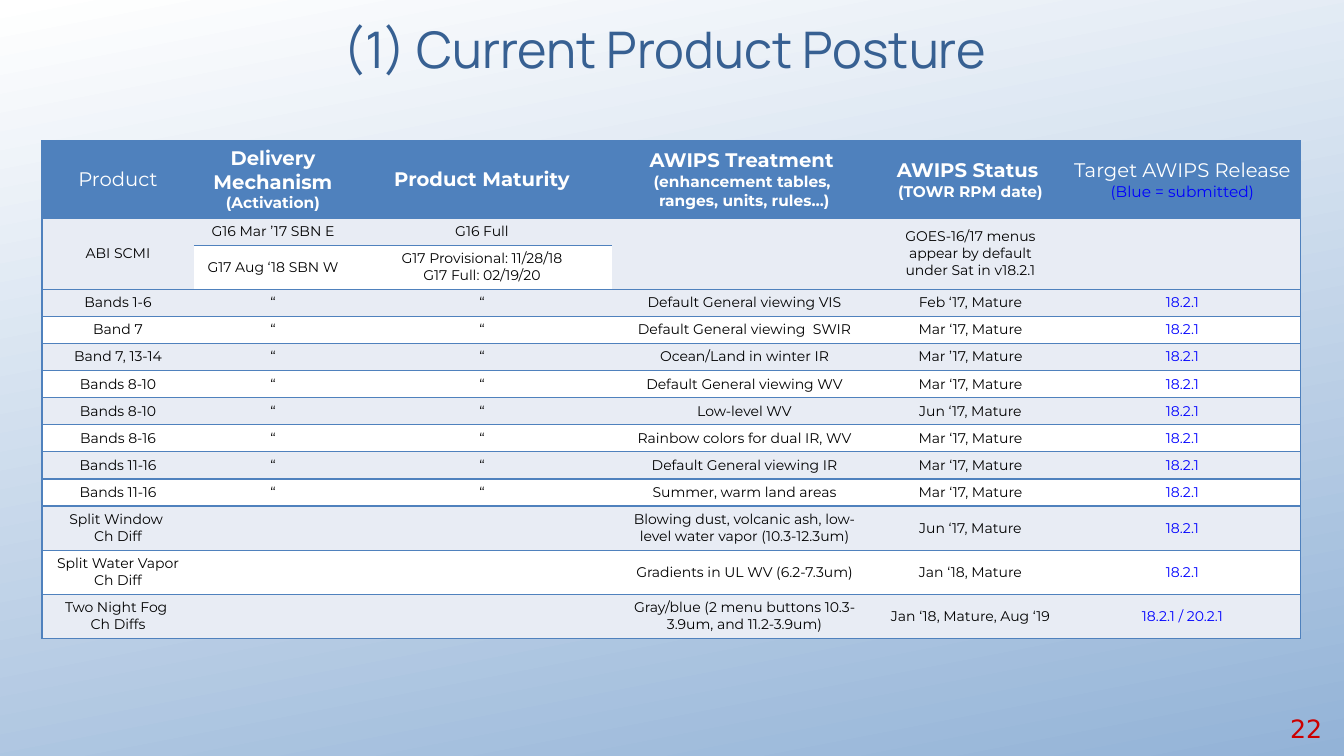
from lxml import etree
from pptx import Presentation
from pptx.dml.color import RGBColor
from pptx.enum.text import MSO_ANCHOR, PP_ALIGN
from pptx.oxml.ns import qn
from pptx.util import Emu, Pt

MIDDLE = MSO_ANCHOR.MIDDLE
CENTER, RIGHT = PP_ALIGN.CENTER, PP_ALIGN.RIGHT

PX = 9071  # EMU per px, 100.8 px to the inch
BLUE, PALE, WHITE, BLACK = "4F81BD", "E8ECF4", "FFFFFF", "000000"
SUBMITTED = "0000FF"
PLAIN_TABLE_STYLE = "{2D5ABB26-0587-4C30-8999-92F81FD0307C}"

COLUMN_WIDTHS = [152, 158, 260, 265, 187, 237]
ROW_HEIGHTS = [77, 27, 44] + [27] * 8 + [44] * 3
MERGED_COLUMNS = (0, 3, 4, 5)
RELEASE_COLUMN = 5

HEADER = [
    "Product",
    "Delivery Mechanism\n(Activation)",
    "Product Maturity",
    "AWIPS Treatment \v(enhancement tables, \vranges, units, rules…)",
    "AWIPS Status \n(TOWR RPM date)",
    "Target AWIPS Release\n(Blue = submitted)",
]
LIGHT_HEADINGS = ("Product", HEADER[RELEASE_COLUMN])
SCMI_ROWS = [
    ["ABI SCMI", "G16 Mar ’17 SBN E", "G16 Full", "",
     "GOES-16/17 menus\nappear by default\nunder Sat in v18.2.1", ""],
    ["", "G17 Aug ‘18 SBN W",
     "G17 Provisional: 11/28/18\vG17 Full: 02/19/20", "", "", ""],
]
# Product, treatment, status
BANDS = [
    ("Bands 1-6", "Default General viewing VIS", "Feb ‘17, Mature"),
    ("Band 7", "Default General viewing  SWIR", "Mar ‘17, Mature"),
    ("Band 7, 13-14", "Ocean/Land in winter IR", "Mar ’17, Mature"),
    ("Bands 8-10", "Default General viewing WV", "Mar ‘17, Mature"),
    ("Bands 8-10", "Low-level WV", "Jun ‘17, Mature"),
    ("Bands 8-16", "Rainbow colors for dual IR, WV", "Mar ‘17, Mature"),
    ("Bands 11-16", "Default General viewing IR", "Mar ‘17, Mature"),
    ("Bands 11-16", "Summer, warm land areas", "Mar ‘17, Mature"),
]
# Product, treatment, status, release
DIFFERENCES = [
    ("Split Window \nCh Diff",
     "Blowing dust, volcanic ash, low-level water vapor (10.3-12.3um)",
     "Jun ‘17, Mature", "18.2.1"),
    ("Split Water Vapor Ch Diff", "Gradients in UL WV (6.2-7.3um)",
     "Jan ‘18, Mature", "18.2.1"),
    ("Two Night Fog \nCh Diffs",
     "Gray/blue (2 menu buttons 10.3-3.9um, and 11.2-3.9um)",
     "Jan ‘18, Mature, Aug ‘19", "18.2.1 / 20.2.1"),
]


def px(length):
    return Emu(length * PX)


def rgb(color):
    return RGBColor.from_string(color)


def style_run(run, font, size, color, bold=False):
    run.font.name = font
    run.font.size = Pt(size)
    run.font.bold = bold
    run.font.color.rgb = rgb(color)


def paint_background(slide):
    fill = slide.background.fill
    fill.gradient()
    fill.gradient_angle = 101
    for stop, color in zip(fill.gradient_stops, ("93B3D7", WHITE)):
        stop.color.rgb = rgb(color)


def add_label(slide, box, text, font, size, color, align):
    frame = slide.shapes.add_textbox(*map(px, box)).text_frame
    frame.word_wrap = True
    frame.vertical_anchor = MIDDLE
    frame.text = text
    line = frame.paragraphs[0]
    line.alignment = align
    style_run(line.runs[0], font, size, color)


def set_borders(cell, sides):
    """Draw the listed sides (L, R, T, B) ahead of the cell's fill."""
    properties = cell._tc.get_or_add_tcPr()
    for position, side in enumerate(sides):
        border = etree.Element(qn(f"a:ln{side}"), w=str(Pt(1)))
        solid = etree.SubElement(border, qn("a:solidFill"))
        etree.SubElement(solid, qn("a:srgbClr"), val=BLUE)
        properties.insert(position, border)


def fill_cell(cell, text, background):
    cell.fill.solid()
    cell.fill.fore_color.rgb = rgb(background)
    cell.vertical_anchor = MIDDLE
    cell.text_frame.text = text
    for paragraph in cell.text_frame.paragraphs:
        paragraph.alignment = CENTER


def style_heading(cell, heading):
    bold = heading not in LIGHT_HEADINGS
    detail = False
    for paragraph in cell.text_frame.paragraphs:
        for run in paragraph.runs:
            detail = detail or run.text.startswith("(")
            color = SUBMITTED if run.text.startswith("(Blue") else WHITE
            style_run(run, "Montserrat", 11 if detail else 14, color, bold)


def style_entry(cell, color):
    for paragraph in cell.text_frame.paragraphs:
        for run in paragraph.runs:
            style_run(run, "Montserrat", 10, color)


def add_posture_table(slide, rows):
    frame = slide.shapes.add_table(
        len(rows), len(COLUMN_WIDTHS), px(42), px(141),
        px(sum(COLUMN_WIDTHS)), px(sum(ROW_HEIGHTS)))
    table = frame.table
    table._tbl.tblPr.find(qn("a:tableStyleId")).text = PLAIN_TABLE_STYLE
    for column, width in zip(table.columns, COLUMN_WIDTHS):
        column.width = px(width)
    for row, height in zip(table.rows, ROW_HEIGHTS):
        row.height = px(height)

    last = len(COLUMN_WIDTHS) - 1
    for r, entries in enumerate(rows):
        for c, text in enumerate(entries):
            cell = table.cell(r, c)
            merged = c in MERGED_COLUMNS and r in (1, 2)
            if r == 0:
                fill_cell(cell, text, BLUE)
                style_heading(cell, text)
            else:
                fill_cell(cell, text, PALE if r % 2 or merged else WHITE)
                style_entry(cell, SUBMITTED if c == RELEASE_COLUMN else BLACK)
            sides = "L" * (c == 0) + "R" * (c == last)
            sides += "" if merged and r == 2 else "T"
            sides += "" if merged and r == 1 else "B"
            set_borders(cell, sides)

    # ABI SCMI spans both satellites
    for c in MERGED_COLUMNS:
        table.cell(1, c).merge(table.cell(2, c))


def main():
    deck = Presentation()
    deck.slide_width, deck.slide_height = px(1344), px(756)
    slide = deck.slides.add_slide(deck.slide_layouts[6])
    paint_background(slide)

    # Product table
    rows = [HEADER] + SCMI_ROWS
    rows += [[product, "“", "“", treatment, status, "18.2.1"]
             for product, treatment, status in BANDS]
    rows += [[product, "", "", treatment, status, release]
             for product, treatment, status, release in DIFFERENCES]
    add_posture_table(slide, rows)

    # Page number and title
    add_label(slide, (1271, 708, 61, 40), "22", "DejaVu Sans", 18, "CC0000", RIGHT)
    add_label(slide, (134, 0, 1072, 97), "(1) Current Product Posture ",
              "Manrope", 36, "376092", CENTER)

    deck.save("out.pptx")


if __name__ == "__main__":
    main()
